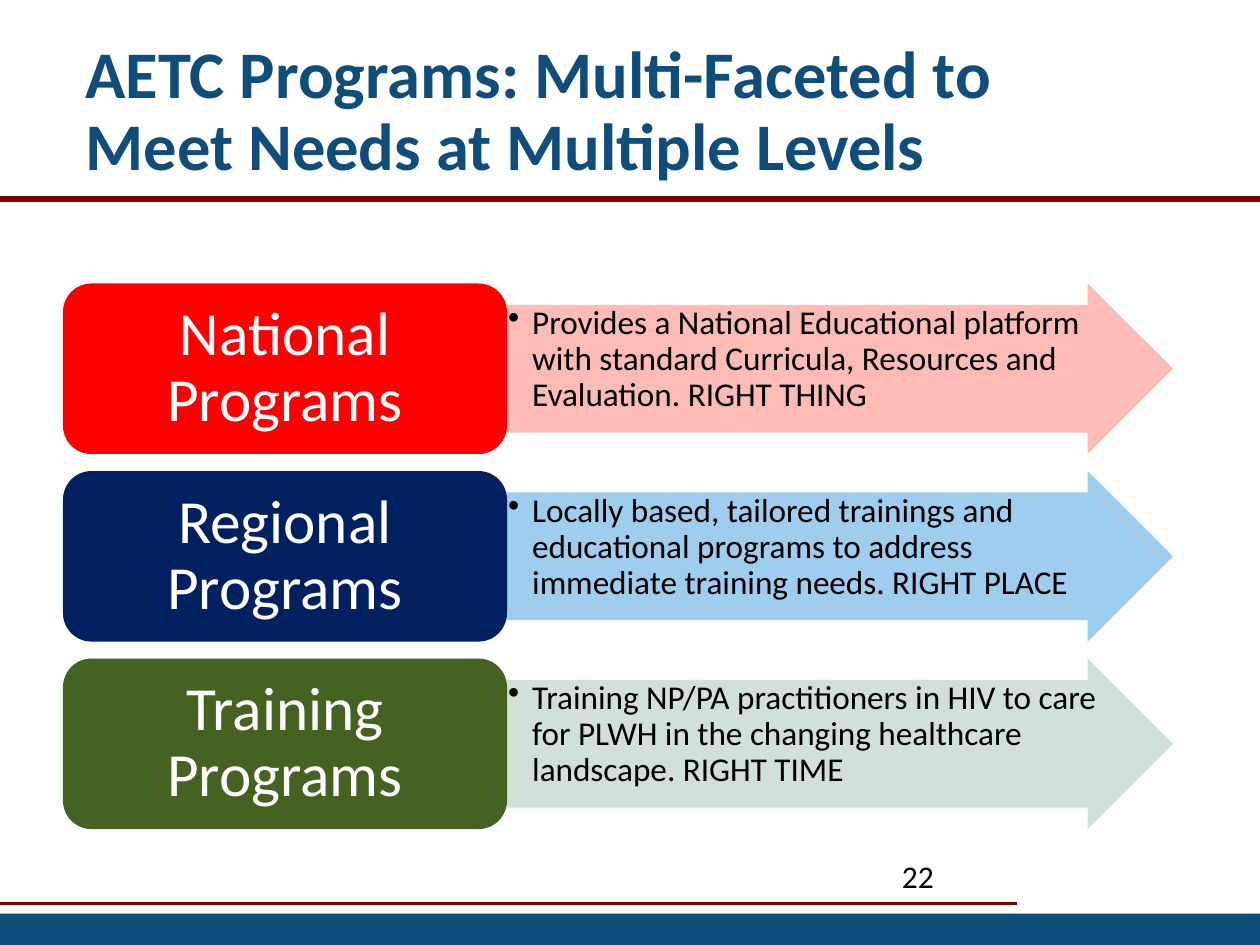
from lxml.etree import SubElement
from pptx import Presentation
from pptx.dml.color import RGBColor
from pptx.enum.shapes import MSO_CONNECTOR, MSO_SHAPE
from pptx.enum.text import MSO_ANCHOR, PP_ALIGN
from pptx.oxml.ns import qn
from pptx.util import Inches, Pt

BLACK = RGBColor(0x00, 0x00, 0x00)
WHITE = RGBColor(0xFF, 0xFF, 0xFF)
NAVY = RGBColor(0x0F, 0x4D, 0x7B)
MAROON = RGBColor(0x80, 0x00, 0x00)

PROGRAMS = [
    ("National Programs",
     "Provides a National Educational platform with standard Curricula, "
     "Resources and Evaluation. RIGHT THING",
     RGBColor(0xFF, 0x00, 0x00), RGBColor(0xFC, 0xB5, 0xAE)),
    ("Regional Programs",
     "Locally based, tailored trainings and educational programs to address "
     "immediate training needs. RIGHT PLACE",
     RGBColor(0x00, 0x20, 0x60), RGBColor(0x94, 0xC8, 0xED)),
    ("Training Programs",
     "Training NP/PA practitioners in HIV to care for PLWH in the changing "
     "healthcare landscape. RIGHT TIME",
     RGBColor(0x46, 0x62, 0x21), RGBColor(0xCD, 0xDE, 0xD6)),
]


def write(sp, text, size, color=BLACK, bold=False, align=PP_ALIGN.LEFT,
          anchor=MSO_ANCHOR.TOP, spacing=0.9, insets=(0.1, 0.05), bullet=False):
    """Write one formatted paragraph into a shape."""
    tf = sp.text_frame
    tf.word_wrap = True
    tf.vertical_anchor = anchor
    tf.margin_left = tf.margin_right = Inches(insets[0])
    tf.margin_top = tf.margin_bottom = Inches(insets[1])
    p = tf.paragraphs[0]
    p.alignment = align
    p.line_spacing = spacing
    if bullet:
        pPr = p._p.get_or_add_pPr()
        pPr.set("marL", str(Inches(0.19)))
        pPr.set("indent", str(Inches(-0.19)))
        SubElement(pPr, qn("a:buChar")).set("char", "•")
    r = p.add_run()
    r.text = text
    r.font.name = "Calibri"
    r.font.size = Pt(size)
    r.font.bold = bold
    r.font.color.rgb = color


def add_block(s, kind, x, y, w, h, fill):
    """Add a filled preset shape without outline or shadow."""
    sp = s.shapes.add_shape(kind, Inches(x), Inches(y), Inches(w), Inches(h))
    sp.shadow.inherit = False
    sp.fill.solid()
    sp.fill.fore_color.rgb = fill
    sp.line.fill.background()
    return sp


def add_text(s, x, y, w, h, text, size, **fmt):
    """Add a text box with one paragraph."""
    sp = s.shapes.add_textbox(Inches(x), Inches(y), Inches(w), Inches(h))
    write(sp, text, size, **fmt)


def add_rule(s, x, y, w, weight):
    """Add a horizontal maroon rule."""
    line = s.shapes.add_connector(MSO_CONNECTOR.STRAIGHT, Inches(x), Inches(y),
                                  Inches(x + w), Inches(y))
    line.line.color.rgb = MAROON
    line.line.width = Pt(weight)
    SubElement(line._element.spPr, qn("a:effectLst"))


def add_header(s, x, y, w, h):
    """Place the title above a full-width rule."""
    add_rule(s, x, y + h, w, 3)
    add_text(s, x + 0.58, y + 0.17, w - 1.38, 1.45,
             "AETC Programs: Multi-Faceted to Meet Needs at Multiple Levels",
             38, color=NAVY, bold=True, anchor=MSO_ANCHOR.MIDDLE)


def add_footer(s, x, y, w, h):
    """Place the page number, short rule and bottom band."""
    add_rule(s, x, y + 0.42, 8.07, 1.5)
    add_block(s, MSO_SHAPE.RECTANGLE, x, y + h - 0.25, w, 0.25, NAVY)
    add_text(s, x + 7.06, y, 2.25, 0.4, "22", 18, spacing=1.0)


def add_program(s, x, y, w, h, name, detail, dark, light):
    """Place a program label and the arrow that describes it."""
    label_w = w * 0.4
    arrow = add_block(s, MSO_SHAPE.RIGHT_ARROW, x + label_w, y, w - label_w, h, light)
    arrow.adjustments[0] = 0.75
    arrow.adjustments[1] = 0.5
    clr = arrow._element.spPr.find(qn("a:solidFill"))[0]
    SubElement(clr, qn("a:alpha")).set("val", "90000")
    write(arrow, detail, 19, insets=(0.01, 0.01), bullet=True)
    label = add_block(s, MSO_SHAPE.ROUNDED_RECTANGLE, x, y, label_w, h, dark)
    write(label, name, 35, color=WHITE, align=PP_ALIGN.CENTER,
          anchor=MSO_ANCHOR.MIDDLE, insets=(0.15, 0.07))


def add_programs(s, x, y, w, h):
    """Stack the programs with gaps of a tenth of a row height."""
    n = len(PROGRAMS)
    row_h = h / (n + 0.1 * (n - 1))
    for i, program in enumerate(PROGRAMS):
        add_program(s, x, y + i * row_h * 1.1, w, row_h, *program)


def main():
    """Build and save the slide."""
    prs = Presentation()
    prs.slide_width = Inches(10)
    prs.slide_height = Inches(7.5)
    s = prs.slides.add_slide(prs.slide_layouts[6])
    add_footer(s, 0, 6.75, 10, 0.75)
    add_header(s, 0, 0, 10, 1.58)
    add_programs(s, 0.5, 2.25, 8.81, 4.33)
    prs.save("out.pptx")


if __name__ == "__main__":
    main()
